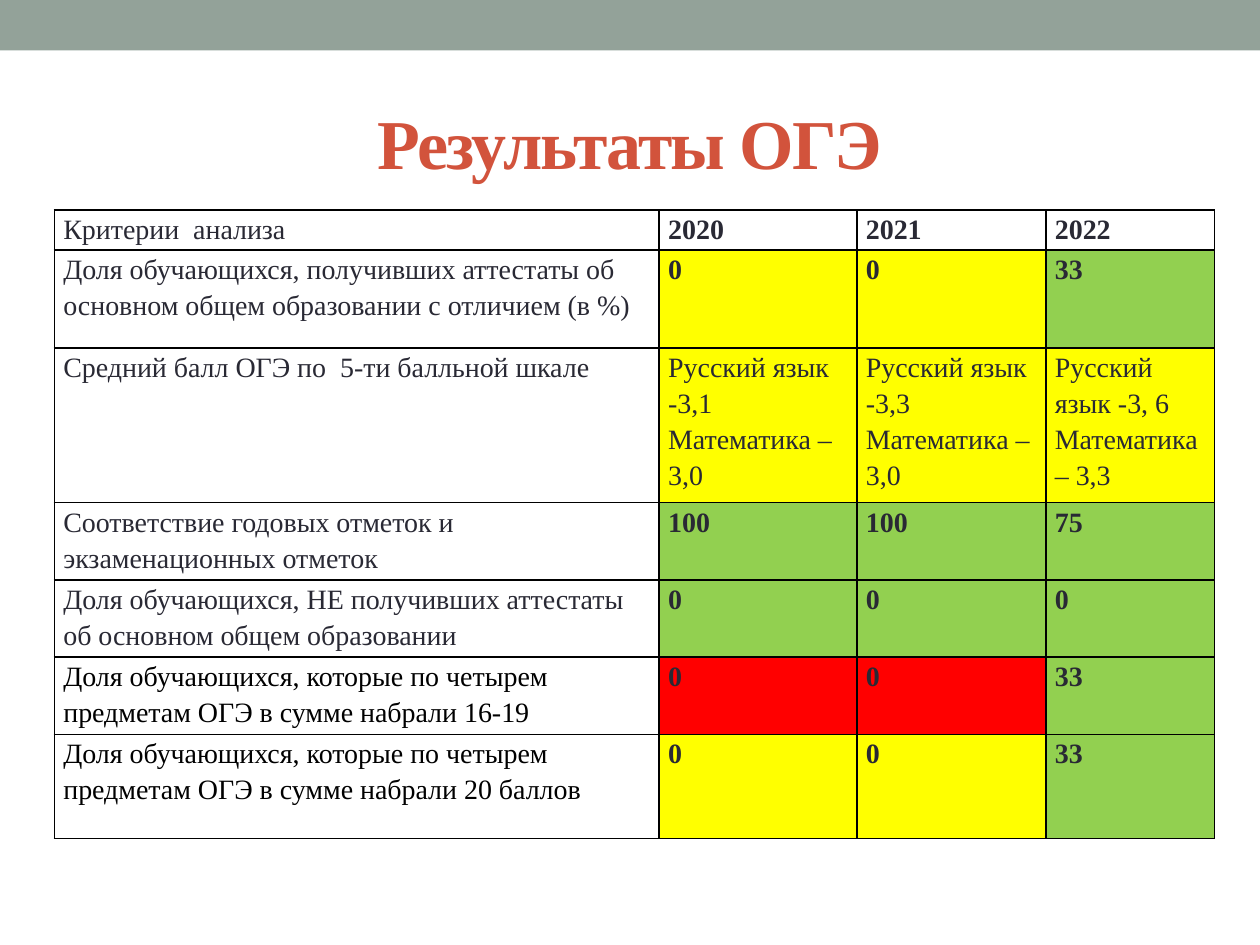
from dataclasses import dataclass

import pptx
import pptx.dml.color
import pptx.enum.shapes
import pptx.enum.text
import pptx.oxml
import pptx.oxml.ns
import pptx.util

Pt = pptx.util.Pt
FONT = "Times New Roman"
INK, BLACK, WHITE = "292934", "000000", "FFFFFF"
YELLOW, GREEN, RED = "FFFF00", "92D050", "FF0000"
COLUMN_WIDTHS = (345.6, 113, 108, 96.5)


@dataclass
class Criterion:
    label: str
    results: tuple[str, ...]
    fills: tuple[str, ...]
    height: float
    label_color: str = INK
    bold: bool = True
    label_space: float = 0


CRITERIA = (
    Criterion("Критерии  анализа", ("2020", "2021", "2022"), (WHITE,) * 3, 23, label_space=10),
    Criterion(
        "Доля обучающихся, получивших аттестаты об основном общем образовании с отличием (в %)",
        ("0", "0", "33"), (YELLOW, YELLOW, GREEN), 56,
    ),
    Criterion(
        "Средний балл ОГЭ по  5-ти балльной шкале",
        (
            "Русский язык -3,1\nМатематика – 3,0",
            "Русский язык -3,3\nМатематика – 3,0",
            "Русский язык -3, 6\nМатематика – 3,3",
        ),
        (YELLOW,) * 3, 81.5, bold=False,
    ),
    Criterion(
        "Соответствие годовых отметок и экзаменационных отметок",
        ("100", "100", "75"), (GREEN,) * 3, 41,
    ),
    Criterion(
        "Доля обучающихся, НЕ получивших аттестаты об основном общем образовании",
        ("0", "0", "0"), (GREEN,) * 3, 41, label_space=10,
    ),
    Criterion(
        "Доля обучающихся, которые по четырем предметам ОГЭ в сумме набрали 16-19",
        ("0", "0", "33"), (RED, RED, GREEN), 41, BLACK, label_space=10,
    ),
    Criterion(
        "Доля обучающихся, которые по четырем предметам ОГЭ в сумме набрали 20 баллов",
        ("0", "0", "33"), (YELLOW, YELLOW, GREEN), 59.5, BLACK, label_space=10,
    ),
)


def color(value: str) -> pptx.dml.color.RGBColor:
    return pptx.dml.color.RGBColor.from_string(value)


def paint(target, value: str) -> None:
    target.fill.solid()
    target.fill.fore_color.rgb = color(value)


def add_span(para, text: str, size: float, ink: str, bold: bool):
    span = para.add_run()
    span.text = text
    span.font.name = FONT
    span.font.size = Pt(size)
    span.font.bold = bold
    span.font.color.rgb = color(ink)
    return span


def add_borders(cell) -> None:
    properties = cell._tc.get_or_add_tcPr()
    for side in ("lnL", "lnR", "lnT", "lnB"):
        properties.append(pptx.oxml.parse_xml(
            f'<a:{side} {pptx.oxml.ns.nsdecls("a")} w="{Pt(1)}"><a:solidFill>'
            f'<a:srgbClr val="{BLACK}"/></a:solidFill></a:{side}>'
        ))


def fill_cell(cell, text: str, fill: str, ink: str, bold: bool, space: float) -> None:
    add_borders(cell)
    paint(cell, fill)
    cell.margin_left = cell.margin_right = Pt(5.2)
    cell.margin_top = cell.margin_bottom = Pt(0)
    frame = cell.text_frame
    for index, line in enumerate(text.split("\n")):
        para = frame.add_paragraph() if index else frame.paragraphs[0]
        para.line_spacing = 1.15
        para.space_after = Pt(0)
        add_span(para, line, 16, ink, bold)
    para.space_after = Pt(space)


def add_banner(page) -> None:
    banner = page.shapes.add_shape(
        pptx.enum.shapes.MSO_SHAPE.RECTANGLE, Pt(0), Pt(0), Pt(720), Pt(28.8)
    )
    banner.shadow.inherit = False
    paint(banner, "93A299")
    banner.line.fill.background()


def add_title(page, text: str) -> None:
    box = page.shapes.add_textbox(Pt(36), Pt(42), Pt(648), Pt(78))
    box.text_frame.word_wrap = True
    box.text_frame.vertical_anchor = pptx.enum.text.MSO_ANCHOR.MIDDLE
    para = box.text_frame.paragraphs[0]
    para.alignment = pptx.enum.text.PP_ALIGN.CENTER
    span = add_span(para, text, 40, "D2533C", True)
    span._r.get_or_add_rPr().set("spc", "-100")


def add_results(page) -> None:
    table = page.shapes.add_table(
        len(CRITERIA), len(COLUMN_WIDTHS), Pt(31), Pt(120),
        Pt(sum(COLUMN_WIDTHS)), Pt(sum(item.height for item in CRITERIA)),
    ).table
    table.first_row = table.horz_banding = False
    for column, width in zip(table.columns, COLUMN_WIDTHS):
        column.width = Pt(width)
    for row, item in zip(table.rows, CRITERIA):
        row.height = Pt(item.height)
        label, *cells = row.cells
        fill_cell(label, item.label, WHITE, item.label_color, False, item.label_space)
        for cell, result, fill in zip(cells, item.results, item.fills):
            fill_cell(cell, result, fill, INK, item.bold, 10 if item.bold else 0)


def main() -> None:
    deck = pptx.Presentation()
    deck.slide_width, deck.slide_height = Pt(720), Pt(540)
    page = deck.slides.add_slide(deck.slide_layouts[6])
    add_banner(page)
    add_title(page, "Результаты ОГЭ")
    add_results(page)
    deck.save("out.pptx")


if __name__ == "__main__":
    main()
